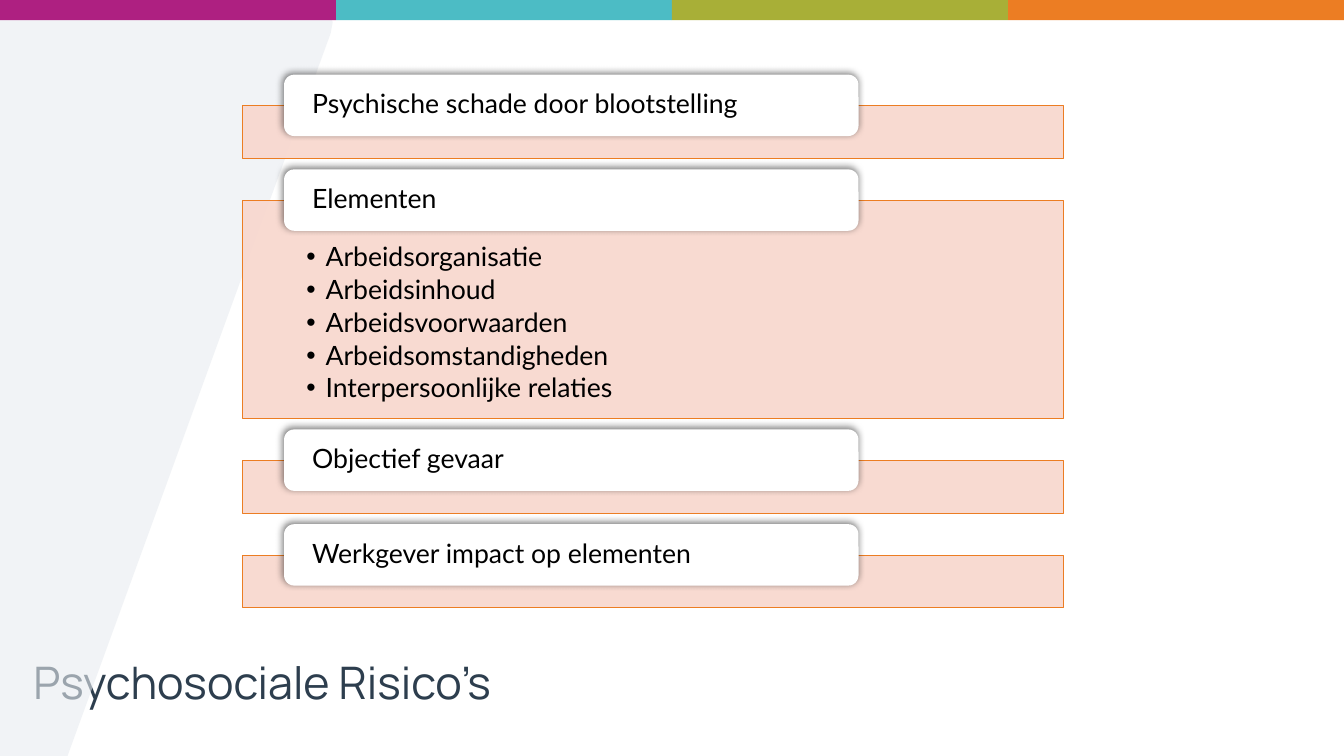
from dataclasses import dataclass

from lxml import etree
from pptx import Presentation, util as u
from pptx.dml.color import RGBColor
from pptx.enum import shapes, text
from pptx.oxml import ns


@dataclass(frozen=True)
class Theme:
    band: tuple = ("AE2081", "4CBCC5", "A8AF37", "EC7D23")
    backdrop: str = "E8ECF0"
    panel: str = "F8D7CD"
    panel_line: str = "EC7D23"
    card: str = "FFFFFF"
    shadow: str = "000000"
    ink: str = "000000"
    title_ink: str = "2D3E4E"
    body_font: str = "Lato"
    title_font: str = "Manrope"
    body_size: float = 19
    title_size: float = 32


THEME = Theme()
SLIDE_WIDTH, SLIDE_HEIGHT = 13.33, 7.5
SECTIONS = [
    ("Psychische schade door blootstelling", []),
    ("Elementen", ["Arbeidsorganisatie", "Arbeidsinhoud", "Arbeidsvoorwaarden",
                   "Arbeidsomstandigheden", "Interpersoonlijke relaties"]),
    ("Objectief gevaar", []),
    ("Werkgever impact op elementen", []),
]


def set_all(target, values):
    for name, value in values.items():
        setattr(target, name, value)


def add_child(parent, tag, **attributes):
    child = etree.SubElement(parent, ns.qn(tag))
    for name, value in attributes.items():
        child.set(name, str(value))
    return child


def paint(shape, fill, opacity=100, line=None):
    shape.shadow.inherit = False
    shape.fill.solid()
    shape.fill.fore_color.rgb = RGBColor.from_string(fill)
    if opacity < 100:
        color = next(shape._element.spPr.iter(ns.qn("a:srgbClr")))
        add_child(color, "a:alpha", val=opacity * 1000)
    if line:
        shape.line.color.rgb = RGBColor.from_string(line)
        shape.line.width = u.Pt(0.75)
    else:
        shape.line.fill.background()


def add_box(slide, kind, left, top, width, height, **look):
    shape = slide.shapes.add_shape(kind, *map(u.Inches, (left, top, width, height)))
    paint(shape, **look)
    return shape


def set_frame(frame, anchor, insets):
    sides = ("margin_left", "margin_top", "margin_right", "margin_bottom")
    set_all(frame, dict(zip(sides, map(u.Inches, insets))))
    set_all(frame, {"word_wrap": True, "vertical_anchor": anchor,
                    "auto_size": text.MSO_AUTO_SIZE.NONE})


def write(paragraph, words, font, size, color, **layout):
    set_all(paragraph, {"alignment": text.PP_ALIGN.LEFT, **layout})
    run = paragraph.add_run()
    run.text = words
    set_all(run.font, {"name": font, "size": u.Pt(size), "bold": False})
    run.font.color.rgb = RGBColor.from_string(color)


def add_body_text(paragraph, words, space_after):
    write(paragraph, words, THEME.body_font, THEME.body_size, THEME.ink,
          line_spacing=0.9, space_after=u.Pt(space_after))


def add_backdrop(slide, left, top, bottom):
    # Slanted area with a rounded top right corner
    outline = [(3.28, 0.33), (3.3, 0.22), (3.27, 0.13), (3.09, top),
               (left, top), (left, bottom), (0.67, bottom)]
    points = [(u.Inches(x), u.Inches(y)) for x, y in outline]
    builder = slide.shapes.build_freeform(*points[0])
    builder.add_line_segments(points[1:], close=True)
    paint(builder.convert_to_shape(), THEME.backdrop, opacity=59)


def add_band(slide, left, top, width, height):
    step = width / len(THEME.band)
    for index, color in enumerate(THEME.band):
        add_box(slide, shapes.MSO_SHAPE.RECTANGLE, left + index * step, top,
                step, height, fill=color)


def add_title(slide, words, left, top, width, height):
    title = slide.shapes.title
    box = map(u.Inches, (left, top, width, height))
    set_all(title, dict(zip(("left", "top", "width", "height"), box)))
    set_frame(title.text_frame, text.MSO_ANCHOR.MIDDLE, (0.1, 0.05, 0.1, 0.05))
    write(title.text_frame.paragraphs[0], words, THEME.title_font,
          THEME.title_size, THEME.title_ink)


def add_bullets(panel, items):
    frame = panel.text_frame
    set_frame(frame, text.MSO_ANCHOR.TOP, (0.63, 0.43, 0.63, 0.15))
    for index, item in enumerate(items):
        paragraph = frame.add_paragraph() if index else frame.paragraphs[0]
        properties = paragraph._p.get_or_add_pPr()
        properties.set("marL", str(u.Inches(0.19)))
        properties.set("indent", str(-u.Inches(0.19)))
        add_child(properties, "a:buFont", typeface="Arial")
        add_child(properties, "a:buChar", char="•")
        add_body_text(paragraph, item, THEME.body_size * 0.15)


def add_card_shadow(card):
    effects = card._element.spPr.find(ns.qn("a:effectLst"))
    shadow = add_child(effects, "a:outerShdw", blurRad=u.Pt(5), dist=u.Pt(2),
                       dir=245 * 60000, algn="tl", rotWithShape=0)
    color = add_child(shadow, "a:srgbClr", val=THEME.shadow)
    add_child(color, "a:alpha", val=50000)


def add_section(slide, heading, items, left, top, width, height):
    # Panel, with its heading card overlapping the top edge
    panel = add_box(slide, shapes.MSO_SHAPE.RECTANGLE, left, top, width, height,
                    fill=THEME.panel, opacity=90, line=THEME.panel_line)
    if items:
        add_bullets(panel, items)
    card = add_box(slide, shapes.MSO_SHAPE.ROUNDED_RECTANGLE, left + width * 0.05,
                   top - 0.31, width * 0.7, 0.61, fill=THEME.card)
    add_card_shadow(card)
    set_frame(card.text_frame, text.MSO_ANCHOR.MIDDLE, (0.25, 0, 0.25, 0))
    add_body_text(card.text_frame.paragraphs[0], heading, 0)


def add_sections(slide, sections, left, top, width):
    for heading, items in sections:
        height = 2.16 if items else 0.52
        add_section(slide, heading, items, left, top, width, height)
        top += height + 0.42


def main():
    presentation = Presentation()
    presentation.slide_width = u.Inches(SLIDE_WIDTH)
    presentation.slide_height = u.Inches(SLIDE_HEIGHT)
    slide = presentation.slides.add_slide(presentation.slide_layouts[5])
    add_backdrop(slide, 0, 0.05, SLIDE_HEIGHT)
    add_band(slide, 0, 0, SLIDE_WIDTH, 0.2)
    add_title(slide, "Psychosociale Risico’s", 0.23, 6.14, 10.83, 1.25)
    add_sections(slide, SECTIONS, 2.41, 1.05, 8.14)
    presentation.save("out.pptx")


if __name__ == "__main__":
    main()
